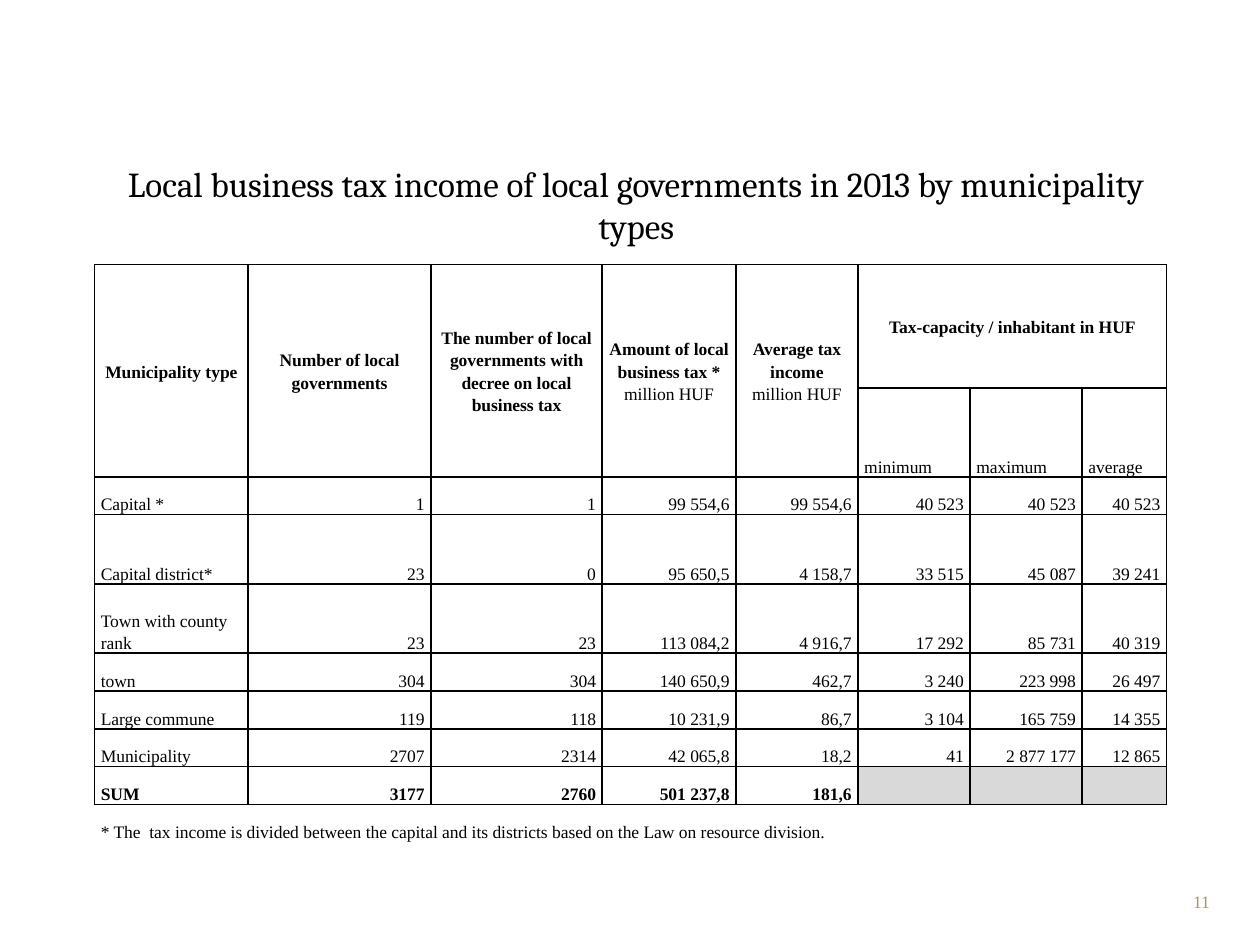
import lxml.etree
import pptx
import pptx.util
import pptx.dml.color
import pptx.enum.text
import pptx.oxml
import pptx.oxml.ns

Inches = pptx.util.Inches
Pt = pptx.util.Pt
RGBColor = pptx.dml.color.RGBColor
Align = pptx.enum.text.PP_ALIGN
Anchor = pptx.enum.text.MSO_ANCHOR
qn = pptx.oxml.ns.qn

BLACK = RGBColor(0x00, 0x00, 0x00)
GOLD = RGBColor(0xA6, 0x97, 0x65)
GREY = RGBColor(0xD9, 0xD9, 0xD9)

PLAIN = "{2D5ABB26-0587-4C30-8999-92F81FD0307C}"  # table style: no fill, no grid
SIDES = ("lnL", "lnR", "lnT", "lnB")

COLS = (1.22, 1.45, 1.36, 1.06, 0.97, 0.89, 0.89, 0.67)
ROWS = (0.98, 0.7, 0.3, 0.55, 0.55, 0.3, 0.3, 0.3, 0.3, 0.3)

# Each heading is a list of paragraphs; each paragraph is a list of (text, bold) runs.
HEADS = [
    [[("Municipality type", True)]],
    [[("Number of local governments", True)]],
    [[("The number of local governments with decree on local business tax", True)]],
    [[("Amount of local business tax *", True), ("\n", True), ("million HUF", False)]],
    [[("Average tax income", True)], [("million HUF", False)]],
    [[("Tax-capacity / inhabitant in HUF", True)]],
]
SUBS = ("minimum", "maximum", "average")
DATA = [
    ("Capital *", "1", "1", "99 554,6", "99 554,6", "40 523", "40 523", "40 523"),
    ("Capital district*", "23", "0", "95 650,5", "4 158,7", "33 515", "45 087", "39 241"),
    ("Town with county rank", "23", "23", "113 084,2", "4 916,7", "17 292", "85 731", "40 319"),
    ("town", "304", "304", "140 650,9", "462,7", "3 240", "223 998", "26 497"),
    ("Large commune", "119", "118", "10 231,9", "86,7", "3 104", "165 759", "14 355"),
    ("Municipality", "2707", "2314", "42 065,8", "18,2", "41", "2 877 177", "12 865"),
    ("SUM", "3177", "2760", "501 237,8", "181,6", "", "", ""),
]
NOTE = ("* The  tax income is divided between the capital and its districts "
        "based on the Law on resource division.")


class Deck:
    def __init__(self):
        self.prs = pptx.Presentation()
        self.prs.slide_width, self.prs.slide_height = Inches(10), Inches(7.5)
        self.slide = self.prs.slides.add_slide(self.prs.slide_layouts[5])
        self.body = {"name": "Times New Roman", "size": Pt(10), "bold": False}
        self.inset = {"margin_left": Inches(0.05), "margin_right": Inches(0.05),
                      "margin_top": 0, "margin_bottom": 0}

    def apply(self, item, values):
        for key, value in values.items():
            setattr(item, key, value)

    def fill_in(self, para, runs, align, color=BLACK, **style):
        """Add (text, bold) runs to a paragraph; a newline becomes a line break."""
        para.alignment = align
        for text, bold in runs:
            if text == "\n":
                para.add_line_break()
                lxml.etree.SubElement(para._p.findall(qn("a:br"))[-1], qn("a:rPr"), sz="1000")
                continue
            run = para.add_run()
            run.text = text
            self.apply(run.font, {**self.body, "bold": bold, **style})
            run.font.color.rgb = color

    def title(self, text, x, y, w, h):
        shape = self.slide.shapes.title
        self.apply(shape, {"left": Inches(x), "top": Inches(y),
                           "width": Inches(w), "height": Inches(h)})
        shape.text_frame.vertical_anchor = Anchor.MIDDLE
        self.fill_in(shape.text_frame.paragraphs[0], [(text, False)], Align.CENTER,
                     name="Cambria", size=Pt(20))

    def label(self, text, x, y, w, h):
        box = self.slide.shapes.add_textbox(Inches(x), Inches(y), Inches(w), Inches(h))
        box.text_frame.word_wrap = True
        self.fill_in(box.text_frame.paragraphs[0], [(text, False)], Align.RIGHT, GOLD)

    def table(self, x, y, cols, rows):
        frame = self.slide.shapes.add_table(
            len(rows), len(cols), Inches(x), Inches(y), Inches(sum(cols)), Inches(sum(rows)))
        grid = frame.table
        self.apply(grid, {"first_row": False, "horz_banding": False})
        grid._tbl.tblPr.find(qn("a:tableStyleId")).text = PLAIN
        for col, width in zip(grid.columns, cols):
            col.width = Inches(width)
        for row, height in zip(grid.rows, rows):
            row.height = Inches(height)
        for cell in grid.iter_cells():
            self.apply(cell, self.inset)
            # Keeps empty cells from stretching their row
            lxml.etree.SubElement(cell.text_frame.paragraphs[0]._p,
                                  qn("a:endParaRPr"), sz="1000")
        return grid

    def cell(self, cell, paras, align=Align.LEFT, anchor=Anchor.BOTTOM):
        cell.vertical_anchor = anchor
        text = cell.text_frame
        for i, runs in enumerate(paras):
            para = text.add_paragraph() if i else text.paragraphs[0]
            para.line_spacing = 1.15
            self.fill_in(para, runs, align)

    def edge(self, cell, sides=SIDES, fill=None):
        """Draw black borders on the given sides, then fill the cell."""
        props = cell._tc.get_or_add_tcPr()
        for side in sides:
            props.append(pptx.oxml.parse_xml(
                f'<a:{side} {pptx.oxml.ns.nsdecls("a")} w="{Pt(1)}"><a:solidFill>'
                f'<a:srgbClr val="{BLACK}"/></a:solidFill></a:{side}>'))
        if fill is None:
            cell.fill.background()
        else:
            cell.fill.solid()
            cell.fill.fore_color.rgb = fill


def main():
    deck = Deck()
    deck.title("Local business tax income of local governments in 2013 by municipality types",
               0.59, 0.76, 8.92, 1.72)
    grid = deck.table(0.75, 2.1, COLS, ROWS)
    last = len(ROWS) - 1
    wide = len(COLS) - 1

    for c, paras in enumerate(HEADS):
        head = grid.cell(0, c)
        head.merge(grid.cell(0, wide) if c == 5 else grid.cell(1, c))
        deck.cell(head, paras, Align.CENTER, Anchor.MIDDLE)
    for c, text in enumerate(SUBS, 5):
        deck.cell(grid.cell(1, c), [[(text, False)]])

    for r, row in enumerate(DATA, 2):
        for c, text in enumerate(row):
            if text:
                deck.cell(grid.cell(r, c), [[(text, row[0] == "SUM")]],
                          Align.RIGHT if c else Align.LEFT)

    note = grid.cell(last, 0)
    note.merge(grid.cell(last, wide))
    deck.cell(note, [[(NOTE, False)]])

    for r in range(len(ROWS)):
        for c in range(len(COLS)):
            blank = r == last - 1 and c >= 5
            deck.edge(grid.cell(r, c), ("lnT",) if r == last else SIDES,
                      GREY if blank else None)

    deck.label("11", 7.37, 7.02, 2.33, 0.4)
    deck.prs.save("out.pptx")


if __name__ == "__main__":
    main()
